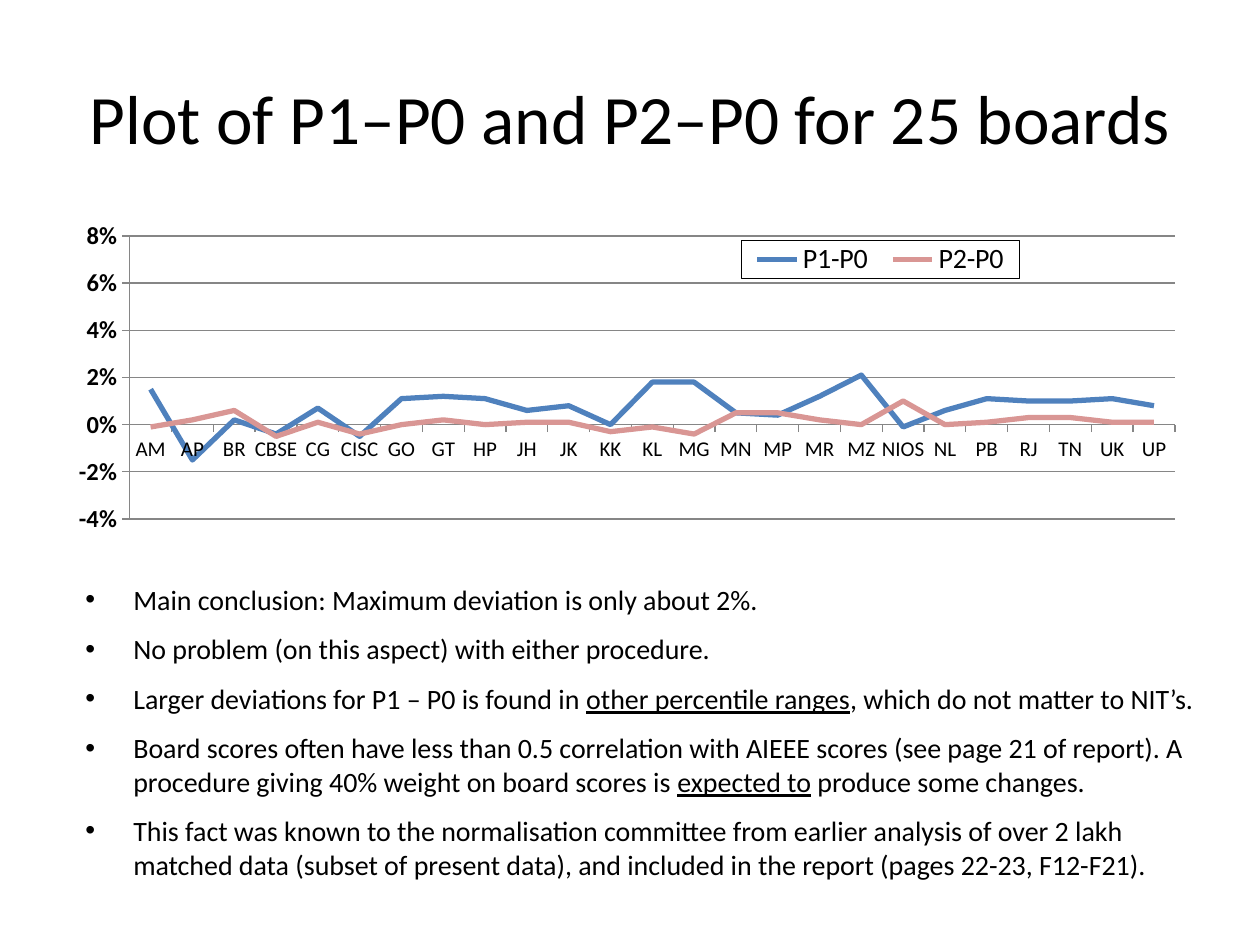
from lxml.etree import SubElement
from pptx import Presentation
from pptx.chart.data import CategoryChartData
from pptx.dml.color import RGBColor
from pptx.enum.chart import XL_CHART_TYPE, XL_LEGEND_POSITION, XL_TICK_MARK
from pptx.enum.text import MSO_ANCHOR, PP_ALIGN
from pptx.oxml import parse_xml
from pptx.oxml.ns import nsdecls, qn
from pptx.util import Inches, Pt

FONT = "Calibri"
BLACK = RGBColor(0x00, 0x00, 0x00)
GREY = RGBColor(0x86, 0x86, 0x86)
BLUE = RGBColor(0x4F, 0x81, 0xBD)
PINK = RGBColor(0xD9, 0x96, 0x94)
WIDTH, HEIGHT = Inches(10), Inches(7.5)

BOARDS = ("AM AP BR CBSE CG CISC GO GT HP JH JK KK KL "
          "MG MN MP MR MZ NIOS NL PB RJ TN UK UP").split()
DEVIATIONS = [
    ("P1-P0", BLUE, [0.015, -0.015, 0.002, -0.004, 0.007, -0.005, 0.011, 0.012, 0.011,
                     0.006, 0.008, 0, 0.018, 0.018, 0.005, 0.004, 0.012, 0.021,
                     -0.001, 0.006, 0.011, 0.01, 0.01, 0.011, 0.008]),
    ("P2-P0", PINK, [-0.001, 0.002, 0.006, -0.005, 0.001, -0.004, 0, 0.002, 0,
                     0.001, 0.001, -0.003, -0.001, -0.004, 0.005, 0.005, 0.002, 0,
                     0.01, 0, 0.001, 0.003, 0.003, 0.001, 0.001]),
]
# Every second part of a conclusion is underlined.
CONCLUSIONS = [
    ["Main conclusion: Maximum deviation is only about 2%."],
    ["No problem (on this aspect) with either procedure."],
    ["Larger deviations for P1 – P0 is found in ", "other percentile ranges",
     ", which do not matter to NIT’s."],
    ["Board scores often have less than 0.5 correlation with AIEEE scores "
     "(see page 21 of report). A procedure giving 40% weight on board scores is ",
     "expected to", " produce some changes."],
    ["This fact was known to the normalisation committee from earlier analysis of "
     "over 2 lakh matched data (subset of present data), and included in the report "
     "(pages 22-23, F12-F21)."],
]


def share(left, top, width, height):
    """Turn shares of the slide's size into lengths."""
    return (int(left * WIDTH), int(top * HEIGHT), int(width * WIDTH), int(height * HEIGHT))


def style_font(font, size, bold=False):
    font.name = FONT
    font.size = Pt(size)
    font.bold = bold
    font.color.rgb = BLACK


def add_text_box(slide, area):
    box = slide.shapes.add_textbox(*share(*area))
    box.text_frame.word_wrap = True
    return box.text_frame


def add_title(slide, text, area):
    frame = add_text_box(slide, area)
    frame.vertical_anchor = MSO_ANCHOR.MIDDLE
    frame.text = text
    para = frame.paragraphs[0]
    para.alignment = PP_ALIGN.CENTER
    style_font(para.runs[0].font, 39.6)


def add_bullets(slide, items, area):
    frame = add_text_box(slide, area)
    for index, parts in enumerate(items):
        para = frame.add_paragraph() if index else frame.paragraphs[0]
        para.space_before = Pt(9)
        properties = para._p.get_or_add_pPr()
        properties.set("marL", str(Inches(0.38)))
        properties.set("indent", str(-Inches(0.38)))
        SubElement(properties, qn("a:buFont")).set("typeface", "Arial")
        SubElement(properties, qn("a:buChar")).set("char", "•")
        for position, part in enumerate(parts):
            span = para.add_run()
            span.text = part
            style_font(span.font, 16)
            span.font.underline = position % 2 == 1


def manual_layout(x, y, w, h, inner=False):
    target = '<c:layoutTarget val="inner"/>' if inner else ""
    return parse_xml(
        f'<c:layout {nsdecls("c")}><c:manualLayout>{target}'
        '<c:xMode val="edge"/><c:yMode val="edge"/>'
        f'<c:x val="{x}"/><c:y val="{y}"/><c:w val="{w}"/><c:h val="{h}"/>'
        '</c:manualLayout></c:layout>')


def drop_layout(element):
    for layout in element.findall(qn("c:layout")):
        element.remove(layout)


def style_line(line, color, width):
    line.color.rgb = color
    line.width = Pt(width)


def style_axes(chart):
    values, boards = chart.value_axis, chart.category_axis
    values.minimum_scale, values.maximum_scale, values.major_unit = -0.04, 0.08, 0.02
    values.tick_labels.number_format = "0%"
    values.tick_labels.number_format_is_linked = False
    values.has_major_gridlines = True
    style_line(values.major_gridlines.format.line, GREY, 0.75)
    for axis, size, bold in ((values, 14, True), (boards, 12, False)):
        axis.major_tick_mark = XL_TICK_MARK.OUTSIDE
        style_line(axis.format.line, GREY, 0.75)
        style_font(axis.tick_labels.font, size, bold)


def style_legend(chart):
    chart.has_legend = True
    legend = chart.legend
    legend.position = XL_LEGEND_POSITION.TOP
    legend.include_in_layout = False
    style_font(legend.font, 16)
    element = legend._element
    drop_layout(element)
    element.find(qn("c:legendPos")).addnext(manual_layout(0.61, 0.065, 0.25, 0.12))
    element.find(qn("c:overlay")).addnext(parse_xml(
        f'<c:spPr {nsdecls("c", "a")}><a:solidFill><a:srgbClr val="FFFFFF"/></a:solidFill>'
        f'<a:ln w="{Pt(0.75)}"><a:solidFill><a:srgbClr val="{BLACK}"/></a:solidFill></a:ln>'
        '</c:spPr>'))


def add_deviation_chart(slide, area):
    data = CategoryChartData(number_format="0.0%")
    data.categories = BOARDS
    for name, _, deviations in DEVIATIONS:
        data.add_series(name, deviations)
    chart = slide.shapes.add_chart(XL_CHART_TYPE.LINE, *share(*area), data).chart
    chart.has_title = False
    style_font(chart.font, 14)
    chart.plots[0].vary_by_categories = False
    for series, (_, color, _) in zip(chart.plots[0].series, DEVIATIONS):
        series.smooth = False
        style_line(series.format.line, color, 3)
    style_axes(chart)
    style_legend(chart)
    plot_area = chart._chartSpace.chart.plotArea
    drop_layout(plot_area)
    plot_area.insert(0, manual_layout(0.06, 0.05, 0.94, 0.9, inner=True))


def main():
    deck = Presentation()
    deck.slide_width, deck.slide_height = WIDTH, HEIGHT
    page = deck.slides.add_slide(deck.slide_layouts[6])
    add_title(page, "Plot of P1–P0 and P2–P0 for 25 boards", (0.05, 0.04, 0.9, 0.167))
    add_deviation_chart(page, (0.05, 0.233, 0.883, 0.333))
    add_bullets(page, CONCLUSIONS, (0.058, 0.61, 0.908, 0.356))
    deck.save("out.pptx")


if __name__ == "__main__":
    main()
